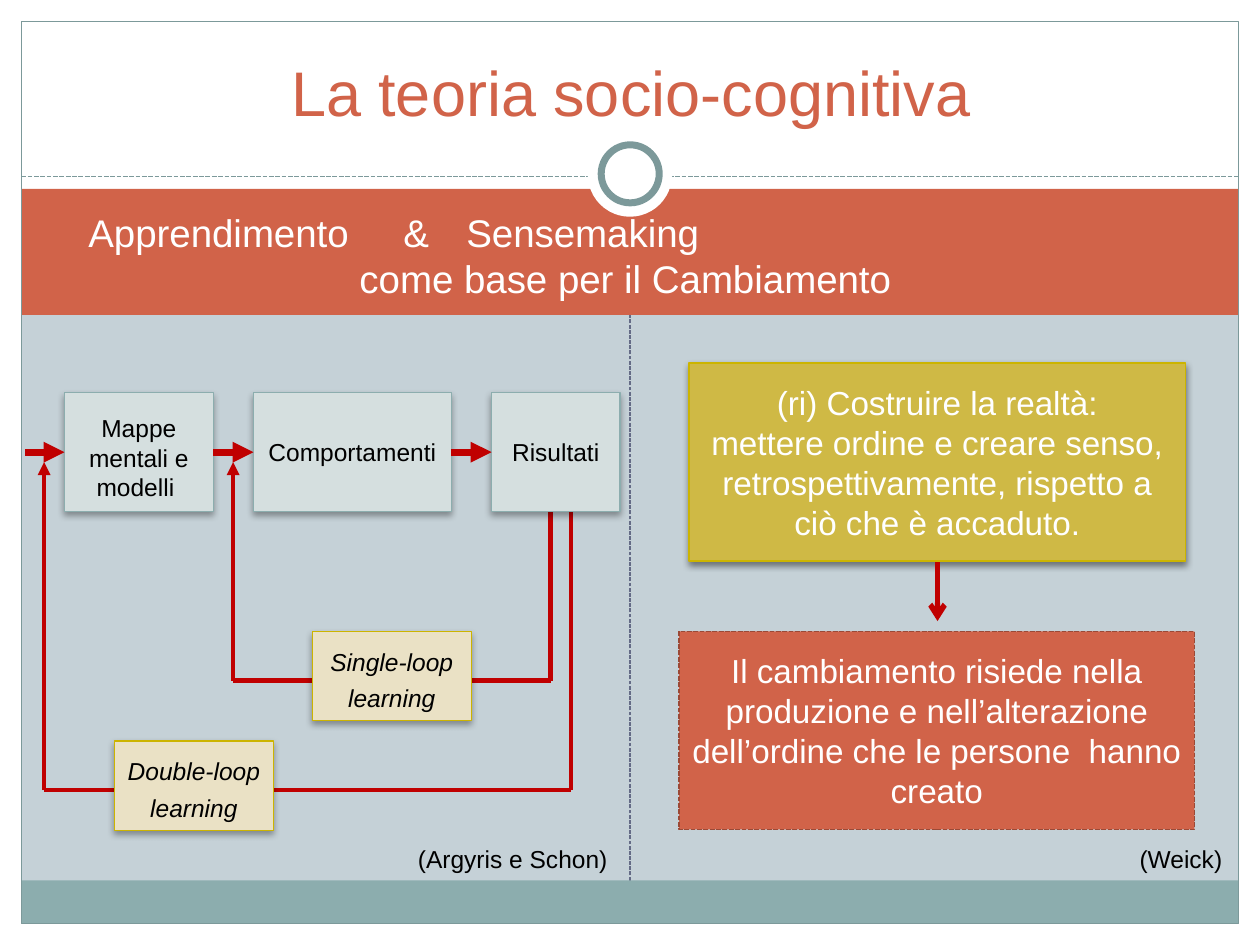
"""Build the slide on socio-cognitive theory: learning loops beside sensemaking."""
from lxml import etree
from pptx import Presentation
from pptx.dml.color import RGBColor
from pptx.enum.dml import MSO_LINE
from pptx.enum.shapes import MSO_CONNECTOR, MSO_SHAPE
from pptx.enum.text import MSO_ANCHOR, PP_ALIGN
from pptx.oxml.ns import qn
from pptx.util import Cm, Pt

RECTANGLE, OVAL = MSO_SHAPE.RECTANGLE, MSO_SHAPE.OVAL
STRAIGHT, DASH = MSO_CONNECTOR.STRAIGHT, MSO_LINE.SQUARE_DOT
LEFT, CENTER, RIGHT = PP_ALIGN.LEFT, PP_ALIGN.CENTER, PP_ALIGN.RIGHT
MIDDLE, BOTTOM = MSO_ANCHOR.MIDDLE, MSO_ANCHOR.BOTTOM

THEME = {
    "font": "Arial",
    "background": "C5D1D7", "white": "FFFFFF", "black": "000000",
    "brick": "D16349", "brick_edge": "9B4936", "teal": "8CADAE",
    "teal_edge": "7C999A", "divider": "646B86", "step": "D5DFDF",
    "sand": "EAE1C5", "gold": "CFB945", "gold_edge": "CCB400", "arrow": "C00000",
    "title": 36, "heading": 22, "statement": 19, "label": 14,
}

TITLE = "La teoria socio-cognitiva"
HEADING = ["\tApprendimento\t&\tSensemaking", "come base per il Cambiamento "]
HEADING_TABS = [2.82, 12.15, 16.55]
PANELS = [
    (RECTANGLE, (0, 0, 25.4, 4.01), "white", None, 0),
    (RECTANGLE, (0, 18.62, 25.4, 0.43), "white", None, 0),
    (RECTANGLE, (0, 0, 0.43, 19.05), "white", None, 0),
    (RECTANGLE, (24.97, 0, 0.43, 19.05), "white", None, 0),
    (RECTANGLE, (0.43, 3.81, 24.54, 2.54), "brick", None, 0),
    (RECTANGLE, (0.43, 17.75, 24.54, 0.87), "teal", None, 0),
]
FRAME = [
    (RECTANGLE, (0.43, 0.43, 24.54, 18.19), None, "teal_edge", 0.75),
    (OVAL, (11.85, 2.67, 1.7, 1.7), "white", None, 0),
    (OVAL, (12.12, 2.92, 1.17, 1.17), "white", "teal_edge", 4),
]
STEPS = [
    ("Mappe mentali e modelli ", 1.3, 3, 0.35),
    ("Comportamenti", 5.11, 3.99, 0.13),
    ("Risultati", 9.91, 2.59, 0.13),
]
STEP_TOP, STEP_HEIGHT, FIRST_ARROW = 7.92, 2.39, 0.51
LOOPS = [
    ("Single-loop learning", 4.7, 11.1, 13.72, 6.3),
    ("Double-loop learning", 0.89, 11.51, 15.93, 2.31),
]
STATEMENTS = [
    (["(ri) Costruire la realtà:",
      "mettere ordine e creare senso, retrospettivamente, rispetto a ciò che è accaduto."],
     (13.89, 7.32, 10.01, 3.99), "gold", "gold_edge", 0.75, None, 45),
    (["Il cambiamento risiede nella produzione e nell’alterazione dell’ordine "
      "che le persone  hanno creato"],
     (13.69, 12.73, 10.39, 3.99), "brick", "brick_edge", 0.9, DASH, 0),
]
CAPTIONS = [("(Argyris e Schon)", 7.7), ("(Weick)", 20.09)]


def color(name):
    return RGBColor.from_string(THEME[name])


def add_xml(parent, tag, **attributes):
    return etree.SubElement(parent, qn(tag), attributes)


def add_shadow(effects, opacity):
    shadow = add_xml(effects, "a:outerShdw", blurRad=str(Pt(4)), dist=str(Pt(2)),
                     dir="5400000", rotWithShape="0")
    shade = add_xml(shadow, "a:srgbClr", val=THEME["black"])
    add_xml(shade, "a:alpha", val=str(opacity * 1000))


def write_text(shape, lines, size="label", ink="black", align=CENTER, anchor=MIDDLE,
               italic=False, spacing=None, top=0.13, side=0.25):
    frame = shape.text_frame
    frame.word_wrap = True
    frame.vertical_anchor = anchor
    frame.margin_left = frame.margin_right = Cm(side)
    frame.margin_top, frame.margin_bottom = Cm(top), Cm(0.13)
    for index, line in enumerate(lines):
        paragraph = frame.add_paragraph() if index else frame.paragraphs[0]
        paragraph.alignment = align
        paragraph.space_before = Pt(0)
        if spacing:
            paragraph.line_spacing = Pt(spacing)
        run = paragraph.add_run()
        run.text = line
        run.font.name, run.font.size = THEME["font"], Pt(THEME[size])
        run.font.italic = italic
        run.font.color.rgb = color(ink)


def add_box(slide, kind, area, fill, edge, width, dash=None, opacity=0):
    shape = slide.shapes.add_shape(kind, *map(Cm, area))
    shape.shadow.inherit = False
    if fill:
        shape.fill.solid()
        shape.fill.fore_color.rgb = color(fill)
    else:
        shape.fill.background()
    if edge:
        shape.line.color.rgb = color(edge)
        shape.line.width = Pt(width)
        shape.line.dash_style = dash
    else:
        shape.line.fill.background()
    if opacity:
        add_shadow(shape._element.spPr.find(qn("a:effectLst")), opacity)
    return shape


def add_line(slide, start, end, ink="arrow", width=2.5, dash=None, head=None):
    line = slide.shapes.add_connector(STRAIGHT, *map(Cm, start + end))
    line.line.color.rgb = color(ink)
    line.line.width = Pt(width)
    line.line.dash_style = dash
    if head:
        add_xml(line.line._get_or_add_ln(), "a:tailEnd", type=head)
    add_xml(line._element.spPr, "a:effectLst")


def place(slide, placeholder, area):
    placeholder.left, placeholder.top, placeholder.width, placeholder.height = map(Cm, area)
    slide.shapes._spTree.append(placeholder._element)


def add_headings(slide):
    title, body = slide.placeholders[0], slide.placeholders[1]
    place(slide, body, (0.51, 3.94, 24.41, 2.39))
    write_text(body, HEADING, size="heading", ink="white", side=0)
    body.text_frame.paragraphs[0].alignment = LEFT
    for paragraph in body.text_frame.paragraphs:
        properties = paragraph._p.get_or_add_pPr()
        properties.set("marL", "0")
        properties.set("indent", "0")
        add_xml(properties, "a:buNone")
        effects = etree.Element(qn("a:effectLst"))
        add_shadow(effects, 45)
        paragraph.runs[0]._r.rPr.find(qn("a:solidFill")).addnext(effects)
    tabs = add_xml(body.text_frame.paragraphs[0]._p.pPr, "a:tabLst")
    for position in HEADING_TABS:
        add_xml(tabs, "a:tab", pos=str(Cm(position)), algn="l")
    place(slide, title, (0.51, 0.74, 24.41, 2))
    write_text(title, [TITLE], size="title", ink="brick", anchor=BOTTOM)


def add_learning(slide):
    middle, bottom = STEP_TOP + STEP_HEIGHT / 2, STEP_TOP + STEP_HEIGHT
    for text, left, right, base, label_left in LOOPS:
        add_line(slide, (left, base), (left, middle + 0.2), head="triangle")
        add_line(slide, (right, bottom), (right, base))
        add_line(slide, (left, base), (right, base))
        label = add_box(slide, RECTANGLE, (label_left, base - 0.99, 3.2, 1.8),
                        "sand", "gold_edge", 0.75, opacity=35)
        write_text(label, [text], italic=True, spacing=21)
    arrow_start = FIRST_ARROW
    for text, left, width, top in STEPS:
        step = add_box(slide, RECTANGLE, (left, STEP_TOP, width, STEP_HEIGHT),
                       "step", "teal", 0.75, opacity=35)
        write_text(step, [text], top=top)
        add_line(slide, (arrow_start, middle), (left, middle), width=4, head="triangle")
        arrow_start = left + width


def add_sensemaking(slide):
    for lines, *style in STATEMENTS:
        box = add_box(slide, RECTANGLE, *style)
        write_text(box, lines, size="statement", ink="white", side=0.2)
    add_line(slide, (18.9, 11.33), (18.9, 12.52), width=3, head="arrow")


def main():
    presentation = Presentation()
    presentation.slide_width, presentation.slide_height = Cm(25.4), Cm(19.05)
    slide = presentation.slides.add_slide(presentation.slide_layouts[1])
    slide.background.fill.solid()
    slide.background.fill.fore_color.rgb = color("background")
    add_line(slide, (12.7, 17.75), (12.7, 6.12), "divider", 0.75, DASH)
    for panel in PANELS:
        add_box(slide, *panel)
    add_line(slide, (0.43, 3.56), (24.97, 3.56), "teal_edge", 0.9, DASH)
    for part in FRAME:
        add_box(slide, *part)
    add_headings(slide)
    add_learning(slide)
    add_sensemaking(slide)
    for text, left in CAPTIONS:
        caption = slide.shapes.add_textbox(*map(Cm, (left, 16.92, 4.8, 0.79)))
        write_text(caption, [text], align=RIGHT)
    presentation.save("out.pptx")


if __name__ == "__main__":
    main()
